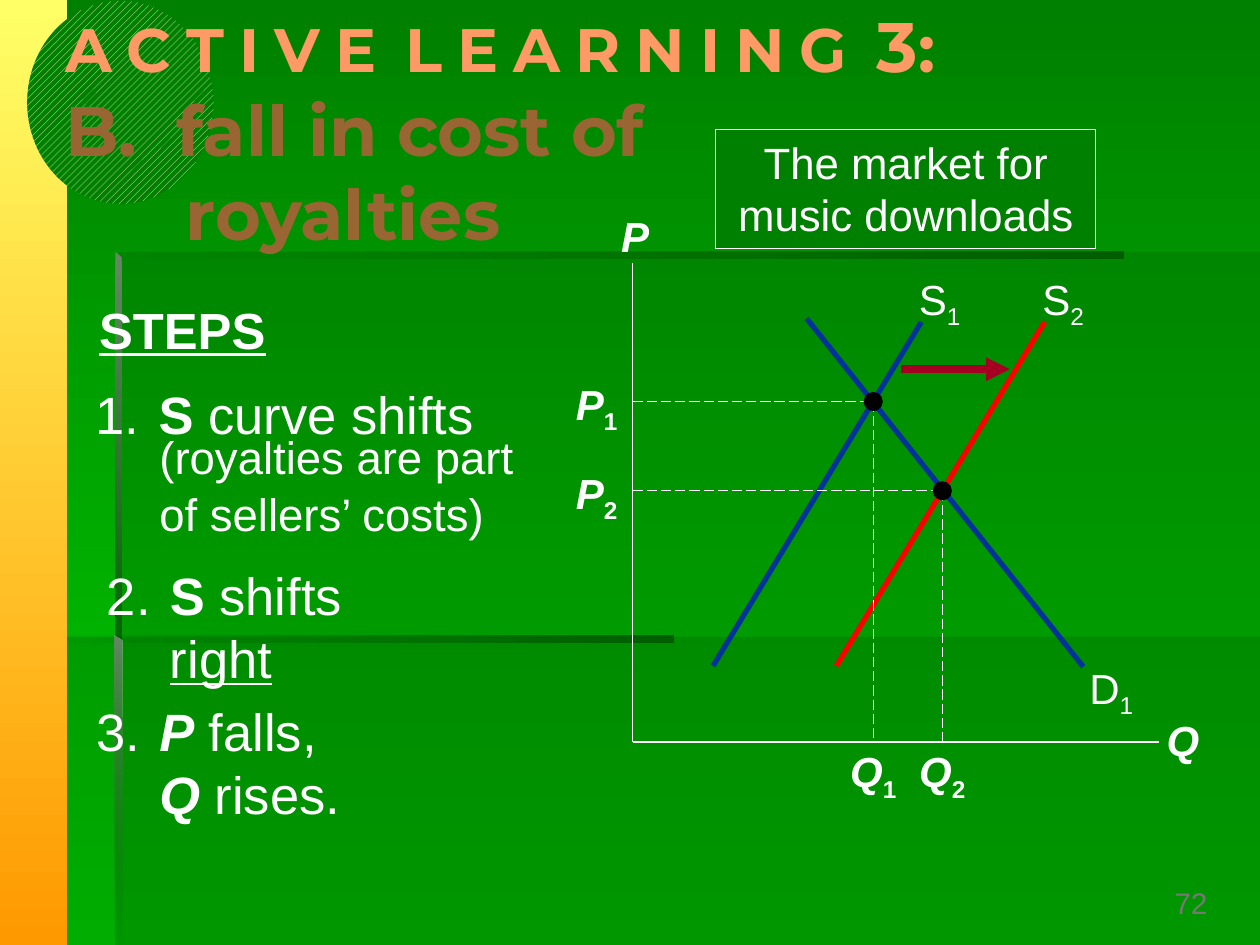
from lxml import etree
from pptx import Presentation
from pptx.dml.color import RGBColor
from pptx.enum.dml import MSO_LINE, MSO_PATTERN
from pptx.enum.shapes import MSO_CONNECTOR, MSO_SHAPE
from pptx.enum.text import MSO_ANCHOR, MSO_AUTO_SIZE, PP_ALIGN
from pptx.oxml.ns import qn
from pptx.util import Pt

RECTANGLE, OVAL = MSO_SHAPE.RECTANGLE, MSO_SHAPE.OVAL
STRAIGHT = MSO_CONNECTOR.STRAIGHT
LONG_DASH = MSO_LINE.LONG_DASH
WIDE_DIAGONAL = MSO_PATTERN.WIDE_UPWARD_DIAGONAL
TOP, MIDDLE = MSO_ANCHOR.TOP, MSO_ANCHOR.MIDDLE
LEFT, CENTER = PP_ALIGN.LEFT, PP_ALIGN.CENTER
NO_AUTOFIT = MSO_AUTO_SIZE.NONE
TITLE_ONLY = 5
DOWN, ACROSS = 270, 0

COLORS = {
    "top": "008000", "bottom": "00CC00", "shade": "006600",
    "deep": "005E00", "pale": "668666", "yellow": "FFFF66",
    "orange": "FF9900", "cream": "FFFFCC", "heading": "FF9966",
    "topic": "996633", "number": "777777", "white": "FFFFFF",
    "black": "000000", "blue": "003399", "red": "FF0000",
    "arrow": "A50021",
}
AXIS_X, AXIS_Y = 361.5, 424


def color(name):
    return RGBColor.from_string(COLORS[name])


def paint_gradient(fill, names, angle):
    fill.gradient()
    fill.gradient_angle = angle
    for stop, name in zip(fill.gradient_stops, names):
        stop.color.rgb = color(name)


class SlideBuilder:
    """Draws on one page; every length is in points."""

    def __init__(self, page, font="Arial"):
        self.page = page
        self.font = font

    def clean(self, shape):
        shape.shadow.inherit = False
        shape.line.fill.background()
        return shape

    def set_opacity(self, shape, percents):
        tags = shape._element.spPr.iter(qn("a:srgbClr"))
        for tag, percent in zip(list(tags), percents):
            alpha = etree.SubElement(tag, qn("a:alpha"))
            alpha.set("val", str(percent * 1000))

    def polygon(self, points):
        corners = [(Pt(x), Pt(y)) for x, y in points]
        builder = self.page.shapes.build_freeform(*corners[0], scale=1.0)
        builder.add_line_segments(corners[1:], close=True)
        return self.clean(builder.convert_to_shape())

    def shade(self, points):
        panel = self.polygon(points)
        panel.fill.solid()
        panel.fill.fore_color.rgb = color("shade")
        self.set_opacity(panel, [30])

    def groove(self, points, names, angle, opacity=(100, 100)):
        strip = self.polygon(points)
        paint_gradient(strip.fill, names, angle)
        self.set_opacity(strip, opacity)

    def shape(self, kind, left, top, width, height, fill=None):
        shape = self.page.shapes.add_shape(
            kind, Pt(left), Pt(top), Pt(width), Pt(height))
        if fill:
            shape.fill.solid()
            shape.fill.fore_color.rgb = color(fill)
        return self.clean(shape)

    def line(self, start, end, name="white", width=1.0, dash=None, arrow=False):
        line = self.page.shapes.add_connector(
            STRAIGHT, *(Pt(value) for value in (*start, *end)))
        line.line.color.rgb = color(name)
        line.line.width = Pt(width)
        if dash:
            line.line.dash_style = dash
        if arrow:
            head = etree.SubElement(line.line._get_or_add_ln(), qn("a:tailEnd"))
            head.set("type", "triangle")
        etree.SubElement(line._element.spPr, qn("a:effectLst"))

    def span(self, para, text, size, name="white", marks="", font=None):
        """Add one run; marks: b bold, i italic, u underline, _ subscript."""
        span = para.add_run()
        span.text = text
        span.font.name = font or self.font
        span.font.size = Pt(size)
        span.font.color.rgb = color(name)
        span.font.bold = "b" in marks
        span.font.italic = "i" in marks
        span.font.underline = "u" in marks
        if "_" in marks:
            span.font._element.set("baseline", "-25000")

    def hang(self, para, indent):
        properties = para._p.get_or_add_pPr()
        properties.set("marL", str(Pt(indent)))
        properties.set("indent", str(-Pt(indent)))

    def fill_text(self, shape, spans, size, name="white", align=LEFT, anchor=TOP):
        frame = shape.text_frame
        frame.word_wrap = True
        frame.vertical_anchor = anchor
        para = frame.paragraphs[0]
        para.alignment = align
        for text, marks in spans:
            if text == "\n":
                para.add_line_break()
            else:
                self.span(para, text, size, name, marks)
        return para

    def text(self, left, top, width, height, spans, size, **style):
        box = self.page.shapes.add_textbox(
            Pt(left), Pt(top), Pt(width), Pt(height))
        return self.fill_text(box, spans, size, **style)

    def label(self, x, y, letter, index="", marks="bi"):
        """Centre a letter with an optional subscript on a point."""
        width, height = 45, 36
        spans = [(letter, marks)]
        if index:
            spans.append((index, marks.replace("i", "") + "_"))
        self.text(x - width / 2, y - height / 2, width, height, spans, 24,
                  align=CENTER)

    def equilibrium(self, x, y, index):
        size = 11
        self.line((AXIS_X, y), (x, y), width=0.75, dash=LONG_DASH)
        self.line((x, y), (x, AXIS_Y), width=0.75, dash=LONG_DASH)
        self.shape(OVAL, x - size / 2, y - size / 2, size, size, "black")
        self.label(341, y + 1, "P", index)
        self.label(x, AXIS_Y + 16.5, "Q", index)

    def title(self, heading, number, topic):
        title = self.page.shapes.title
        self.page.shapes._spTree.append(title._element)
        title.left, title.top = Pt(30), Pt(22.5)
        title.width, title.height = Pt(648), Pt(102)
        frame = title.text_frame
        frame.auto_size = NO_AUTOFIT
        frame.word_wrap = True
        frame.vertical_anchor = MIDDLE
        style = {"marks": "b", "font": "Montserrat"}
        para = frame.paragraphs[0]
        for character in heading:
            size = 30 if character == " " else 35
            self.span(para, character, size, "heading", **style)
        self.span(para, number, 40, "heading", **style)
        self.span(para, ":", 37, "heading", **style)
        second = frame.add_paragraph()
        self.hang(second, 69)
        for position, text in enumerate(topic):
            if position:
                second.add_line_break()
            self.span(second, text, 40, "topic", **style)
        for para in frame.paragraphs:
            para.alignment = LEFT
            para.space_before = Pt(0)


def draw_backdrop(slide):
    paint_gradient(slide.page.background.fill, ("top", "bottom"), DOWN)
    slide.shade([(66, 364), (66, 540), (720, 540), (720, 364)])
    slide.shade([(68, 364), (26, 364), (26, 540), (720, 540), (720, 144), (68, 144)])
    for left, top, width in ((66, 144, 576), (25, 363, 360)):
        right, base = left + width, top + 4
        slide.groove([(left, top), (left, base), (right, base), (right, top)],
                     ("shade", "deep"), ACROSS, (0, 100))
    slide.groove([(66, 144), (66, 367), (70, 367), (69.5, 147)],
                 ("pale", "shade"), DOWN)
    slide.groove([(65.5, 540), (70, 540), (69.5, 366), (65.5, 363)],
                 ("pale", "shade"), DOWN, (100, 0))
    band = slide.shape(RECTANGLE, 0, 0, 38.5, 540)
    paint_gradient(band.fill, ("yellow", "orange"), DOWN)
    disc = slide.shape(OVAL, 15.5, 0.5, 106.5, 116)
    disc.fill.patterned()
    disc.fill.pattern = WIDE_DIAGONAL
    disc.fill.fore_color.rgb = color("cream")
    disc.fill.back_color.rgb = color("top")


def draw_market(slide):
    slide.line((AXIS_X, 150.5), (AXIS_X, AXIS_Y))
    slide.line((AXIS_X, AXIS_Y), (662.5, AXIS_Y))
    slide.label(363, 134.5, "P")
    slide.label(676, 422.5, "Q")
    slide.line((461, 182), (619, 381), "blue", 3)
    slide.label(635, 393, "D", "1", "")
    for index, foot, name in (("1", 407.5, "blue"), ("2", 478, "red")):
        slide.line((foot, 380.5), (foot + 119, 184), name, 3)
        slide.label(foot + 129.5, 170.5, "S", index, "")
    slide.line((515, 211), (577, 211), "arrow", 4.5, arrow=True)
    slide.equilibrium(499, 229.5, "1")
    slide.equilibrium(538.5, 280.5, "2")
    caption = slide.shape(RECTANGLE, 409, 74, 217, 68, "top")
    caption.line.color.rgb = color("white")
    caption.line.width = Pt(0.75)
    slide.fill_text(caption, [("The market for music downloads", "")], 25,
                    align=CENTER)


def draw_steps(slide):
    slide.text(49.5, 167, 142.5, 43, [("STEPS", "bu")], 29)
    steps = (
        (47.5, 214.5, 243, 43, [("S", "b"), (" curve shifts", "")]),
        (54, 318, 198, 43, [("S", "b"), (" shifts ", ""), ("right", "u")]),
        (48, 396, 243, 76, [("P", "bi"), (" falls, ", ""), ("\n", ""),
                            ("Q", "bi"), (" rises.", "")]),
    )
    for number, (*place, spans) in enumerate(steps, 1):
        slide.hang(slide.text(*place, [(f"{number}.\t", "")] + spans, 30), 36)
    reason = slide.text(84, 240, 226, 73,
                        [("(royalties are part of sellers’ costs)", "")], 26)
    reason.line_spacing = 1.05


def main():
    deck = Presentation()
    deck.slide_width, deck.slide_height = Pt(720), Pt(540)
    slide = SlideBuilder(deck.slides.add_slide(deck.slide_layouts[TITLE_ONLY]))
    draw_backdrop(slide)
    slide.title("A C T I V E  L E A R N I N G  ", "3",
                ("B.  fall in cost of ", "royalties"))
    slide.text(664, 501, 48, 29.5, [("72", "")], 17, name="number", anchor=MIDDLE)
    draw_market(slide)
    draw_steps(slide)
    deck.save("out.pptx")


if __name__ == "__main__":
    main()
